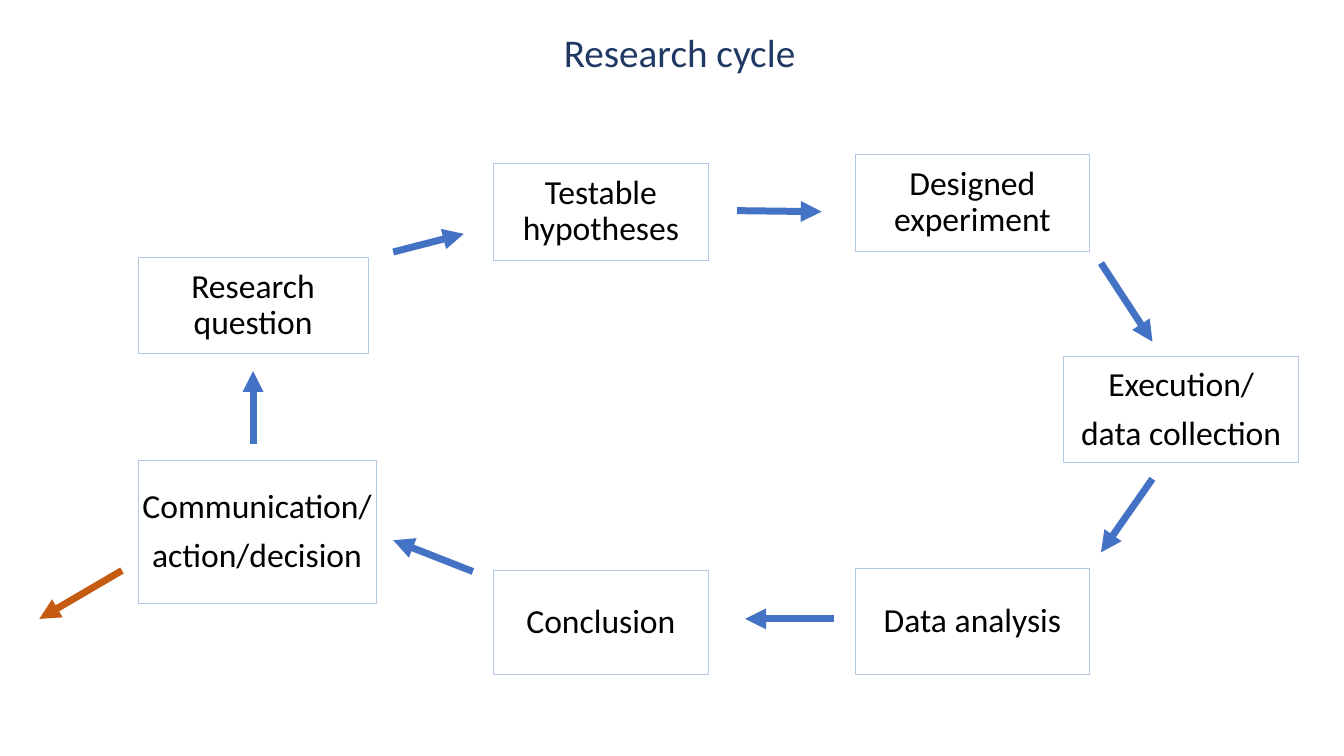
from dataclasses import dataclass

from lxml.etree import SubElement
from pptx import Presentation
from pptx.dml.color import RGBColor
from pptx.enum.shapes import MSO_CONNECTOR, MSO_SHAPE
from pptx.enum.text import MSO_ANCHOR, MSO_AUTO_SIZE, PP_ALIGN
from pptx.oxml.ns import qn
from pptx.slide import Slide
from pptx.util import Inches, Pt


@dataclass(frozen=True)
class Theme:
    font: str = "Calibri"
    title_size: Pt = Pt(28)
    stage_size: Pt = Pt(24)
    title: RGBColor = RGBColor(0x20, 0x38, 0x64)
    text: RGBColor = RGBColor(0x00, 0x00, 0x00)
    box_fill: RGBColor = RGBColor(0xFF, 0xFF, 0xFF)
    box_line: RGBColor = RGBColor(0xB4, 0xC7, 0xE7)
    cycle_arrow: RGBColor = RGBColor(0x44, 0x72, 0xC4)
    exit_arrow: RGBColor = RGBColor(0xC5, 0x5A, 0x11)


@dataclass(frozen=True)
class Stage:
    label: str
    left: float
    top: float
    width: float
    height: float
    wrap: bool = True


@dataclass(frozen=True)
class Arrow:
    start: tuple[float, float]
    end: tuple[float, float]
    color: RGBColor


THEME = Theme()

STAGES = [
    Stage("Research question", 1.37, 2.55, 2.28, 0.96),
    Stage("Testable hypotheses", 4.89, 1.62, 2.14, 0.96),
    Stage("Designed experiment", 8.48, 1.53, 2.33, 0.96),
    Stage("Execution/\ndata collection", 10.55, 3.54, 2.33, 1.05),
    Stage("Data analysis", 8.48, 5.64, 2.33, 1.05),
    Stage("Conclusion", 4.89, 5.66, 2.14, 1.03),
    Stage("Communication/\naction/decision", 1.37, 4.57, 2.36, 1.42, wrap=False),
]

ARROWS = [
    Arrow((3.9, 2.5), (4.6, 2.32), THEME.cycle_arrow),
    Arrow((7.31, 2.09), (8.15, 2.1), THEME.cycle_arrow),
    Arrow((10.92, 2.61), (11.43, 3.39), THEME.cycle_arrow),
    Arrow((11.43, 4.75), (10.92, 5.48), THEME.cycle_arrow),
    Arrow((8.27, 6.14), (7.39, 6.14), THEME.cycle_arrow),
    Arrow((4.69, 5.67), (3.9, 5.36), THEME.cycle_arrow),
    Arrow((2.51, 4.4), (2.51, 3.68), THEME.cycle_arrow),
    Arrow((1.21, 5.66), (0.39, 6.14), THEME.exit_arrow),
]


def add_title(slide: Slide, wording: str) -> None:
    title = slide.shapes.title
    title.left, title.top = Inches(3.02), Inches(0.23)
    title.width, title.height = Inches(7.44), Inches(0.57)
    frame = title.text_frame
    frame.text = wording
    frame.auto_size = MSO_AUTO_SIZE.NONE
    frame.vertical_anchor = MSO_ANCHOR.MIDDLE
    paragraph = frame.paragraphs[0]
    paragraph.alignment = PP_ALIGN.CENTER
    paragraph.font.name = THEME.font
    paragraph.font.size = THEME.title_size
    paragraph.font.color.rgb = THEME.title


def add_stage(slide: Slide, stage: Stage) -> None:
    box = slide.shapes.add_shape(
        MSO_SHAPE.RECTANGLE,
        Inches(stage.left), Inches(stage.top),
        Inches(stage.width), Inches(stage.height),
    )
    box.shadow.inherit = False
    box.fill.solid()
    box.fill.fore_color.rgb = THEME.box_fill
    box.line.color.rgb = THEME.box_line
    box.line.width = Pt(0.5)
    frame = box.text_frame
    frame.text = stage.label
    frame.word_wrap = stage.wrap
    frame.vertical_anchor = MSO_ANCHOR.MIDDLE
    for paragraph in frame.paragraphs:
        paragraph.alignment = PP_ALIGN.CENTER
        paragraph.line_spacing = 0.9
        paragraph.space_before = Pt(9)
        paragraph.font.name = THEME.font
        paragraph.font.size = THEME.stage_size
        paragraph.font.color.rgb = THEME.text


def add_arrow(slide: Slide, arrow: Arrow) -> None:
    connector = slide.shapes.add_connector(
        MSO_CONNECTOR.STRAIGHT,
        *(Inches(value) for value in arrow.start + arrow.end),
    )
    connector.line.color.rgb = arrow.color
    connector.line.width = Pt(5)
    properties = connector.element.spPr
    SubElement(properties.find(qn("a:ln")), qn("a:tailEnd"), type="triangle")
    SubElement(properties, qn("a:effectLst"))


def main() -> None:
    presentation = Presentation()
    presentation.slide_width = Inches(13.33)
    presentation.slide_height = Inches(7.5)
    title_only = presentation.slide_layouts.get_by_name("Title Only")
    slide = presentation.slides.add_slide(title_only)
    add_title(slide, "Research cycle")
    for stage in STAGES:
        add_stage(slide, stage)
    for arrow in ARROWS:
        add_arrow(slide, arrow)
    presentation.save("out.pptx")


if __name__ == "__main__":
    main()
